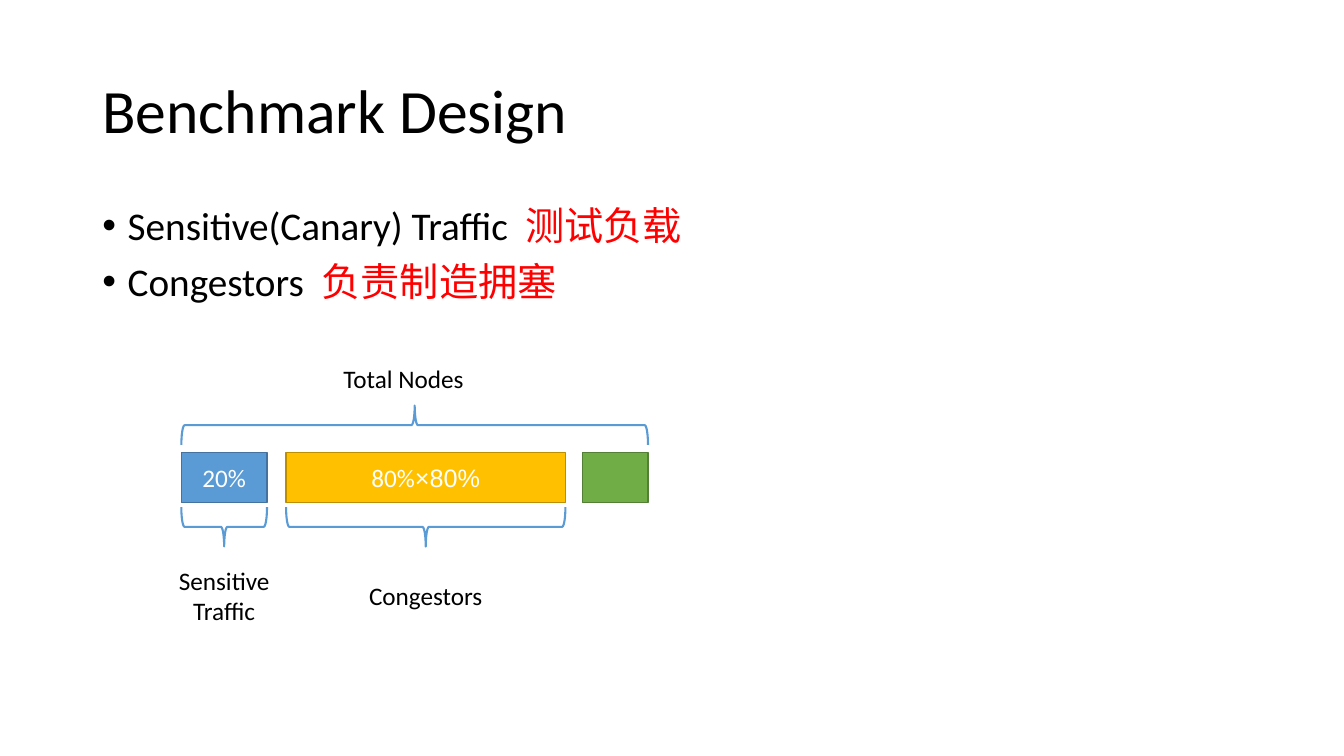
from lxml import etree
from pptx import Presentation
from pptx.dml.color import RGBColor
from pptx.enum import shapes, text
from pptx.oxml import ns
from pptx.util import Cm, Pt

BLACK, WHITE, RED, BLUE = "000000", "FFFFFF", "FF0000", "5B9BD5"


def color(value):
    """Turn a hex string into a colour."""
    return RGBColor.from_string(value)


def add_run(paragraph, content, size, fill, font="Calibri"):
    """Add one formatted run to a paragraph."""
    run = paragraph.add_run()
    run.text = content
    run.font.size = Pt(size)
    run.font.name = font
    run.font.color.rgb = color(fill)


def add_bullet(paragraph):
    """Give a paragraph a round bullet and a hanging indent."""
    properties = paragraph._p.get_or_add_pPr()
    properties.set("marL", str(Cm(0.64)))
    properties.set("indent", str(-Cm(0.64)))
    etree.SubElement(properties, ns.qn("a:buFont"), typeface="Arial")
    etree.SubElement(properties, ns.qn("a:buChar"), char="•")


def add_title(slide, left, top, width, height):
    """Place and fill the title placeholder."""
    title = slide.shapes.title
    title.left, title.top = Cm(left), Cm(top)
    title.width, title.height = Cm(width), Cm(height)
    frame = title.text_frame
    frame.vertical_anchor = text.MSO_ANCHOR.MIDDLE
    paragraph = frame.paragraphs[0]
    paragraph.alignment = text.PP_ALIGN.LEFT
    paragraph.line_spacing = 0.9
    add_run(paragraph, "Benchmark Design", 44, BLACK)


def add_bullets(slide, left, top, width, height):
    """Add the two traffic roles with their Chinese glosses."""
    box = slide.shapes.add_textbox(Cm(left), Cm(top), Cm(width), Cm(height))
    frame = box.text_frame
    frame.word_wrap = True
    roles = [("Sensitive(Canary) Traffic  ", "测试负载"), ("Congestors  ", "负责制造拥塞")]
    for index, (role, gloss) in enumerate(roles):
        paragraph = frame.add_paragraph() if index else frame.paragraphs[0]
        paragraph.line_spacing = 0.9
        paragraph.space_before = Pt(10)
        add_bullet(paragraph)
        add_run(paragraph, role, 28, BLACK)
        add_run(paragraph, gloss, 28, RED)


def add_bar(slide, left, top, width, fill, line, runs):
    """Add one share of the nodes as a filled bar."""
    bar = slide.shapes.add_shape(
        shapes.MSO_SHAPE.RECTANGLE, Cm(left), Cm(top), Cm(width), Cm(1.27))
    bar.shadow.inherit = False
    bar.fill.solid()
    bar.fill.fore_color.rgb = color(fill)
    bar.line.color.rgb = color(line)
    bar.line.width = Pt(1)
    bar.text_frame.vertical_anchor = text.MSO_ANCHOR.MIDDLE
    paragraph = bar.text_frame.paragraphs[0]
    paragraph.alignment = text.PP_ALIGN.CENTER
    for content, font in runs:
        add_run(paragraph, content, 18, WHITE, font)


def add_brace(slide, left, top, span, rotation):
    """Add a brace lying on its side across the given span."""
    depth = 0.99
    brace = slide.shapes.add_shape(
        shapes.MSO_SHAPE.LEFT_BRACE, Cm(left + (span - depth) / 2),
        Cm(top + (depth - span) / 2), Cm(depth), Cm(span))
    brace.rotation = rotation
    brace.shadow.inherit = False
    brace.fill.background()
    brace.line.color.rgb = color(BLUE)
    brace.line.width = Pt(1.5)


def add_label(slide, center, top, width, height, content, alignment):
    """Add a label box centred on a horizontal position."""
    box = slide.shapes.add_textbox(
        Cm(center - width / 2), Cm(top), Cm(width), Cm(height))
    box.text_frame.word_wrap = True
    paragraph = box.text_frame.paragraphs[0]
    paragraph.alignment = alignment
    add_run(paragraph, content, 18, BLACK)


def add_node_diagram(slide, left, top, width):
    """Draw how the total nodes are shared out."""
    center, left_align = text.PP_ALIGN.CENTER, text.PP_ALIGN.LEFT
    add_label(slide, left + width / 2, top, 4.09, 1.02, "Total Nodes", left_align)
    add_brace(slide, left, top + 1.2, width, 90)
    bars = [
        (0, 2.16, BLUE, "43739E", [("20%", "Calibri")]),
        (2.64, 7.04, "FFC000", "BD8E00", [("80%", "Calibri"), ("×80%", "Arial")]),
        (10.11, 1.65, "70AD47", "538035", []),
    ]
    for offset, span, fill, line, runs in bars:
        add_bar(slide, left + offset, top + 2.38, span, fill, line, runs)
    labels = [("Sensitive Traffic", 5.1, 3.12, 1.8), ("Congestors", 5.48, 3.94, 1.02)]
    for (offset, span, *_), (content, drop, label_width, height) in zip(bars, labels):
        add_brace(slide, left + offset, top + 3.76, span, 270)
        add_label(slide, left + offset + span / 2, top + drop,
                  label_width, height, content, center)


def main():
    """Build and save the slide."""
    presentation = Presentation()
    presentation.slide_width, presentation.slide_height = Cm(33.87), Cm(19.05)
    slide = presentation.slides.add_slide(presentation.slide_layouts[5])
    add_title(slide, 2.33, 1.01, 29.21, 3.68)
    add_bullets(slide, 2.33, 5.07, 29.21, 12.09)
    add_node_diagram(slide, 4.57, 9.02, 11.76)
    presentation.save("out.pptx")


if __name__ == "__main__":
    main()
